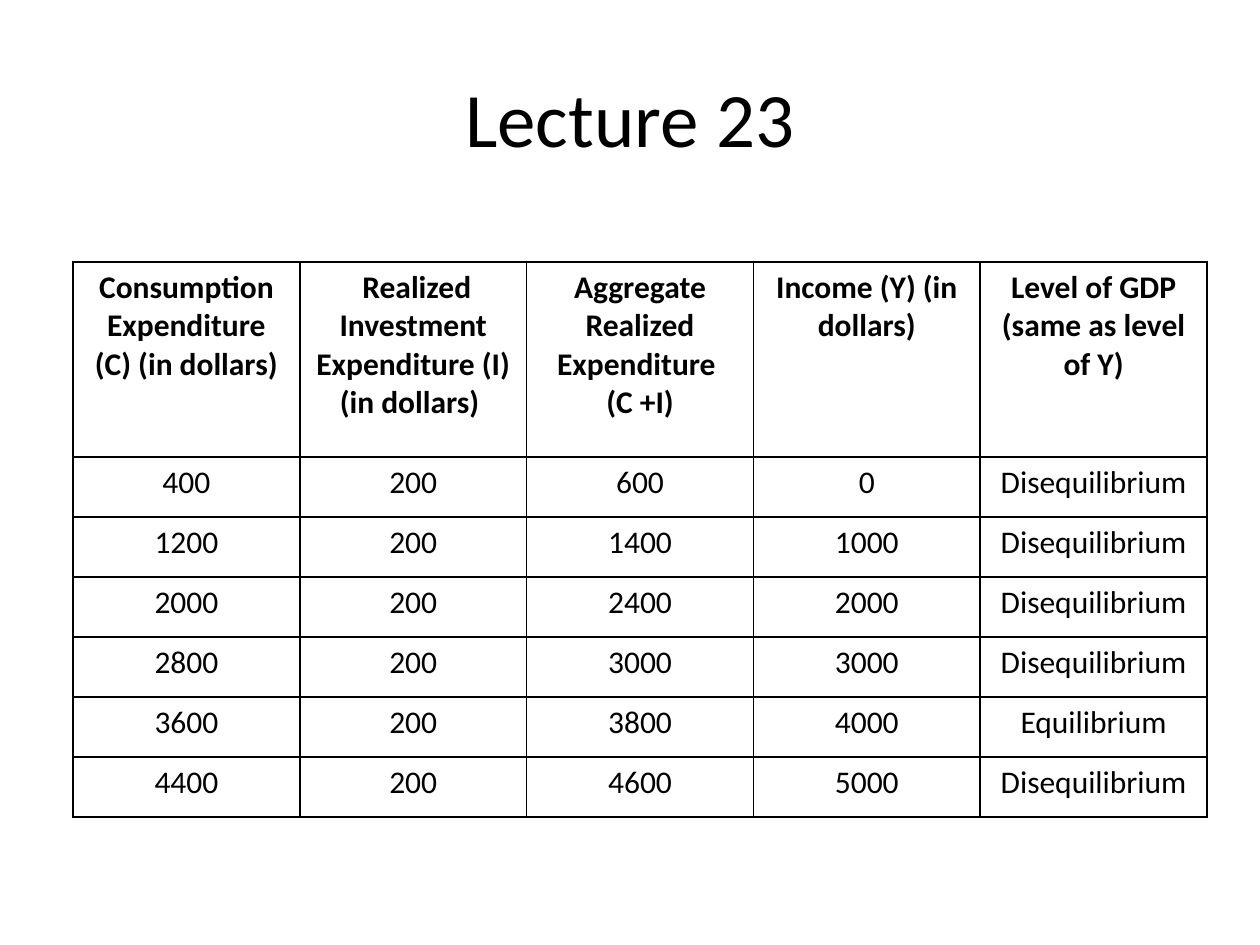
from dataclasses import dataclass

from lxml.etree import SubElement
from pptx import Presentation
from pptx.dml.color import RGBColor
from pptx.enum.text import MSO_ANCHOR, PP_ALIGN
from pptx.oxml.ns import qn
from pptx.util import Emu, Pt


@dataclass(frozen=True)
class Theme:
    """Colours, font and type sizes of the slide."""

    font: str = "Calibri"
    ink: str = "000000"
    title_size: int = 44
    table_size: int = 18
    border_width: int = 1


THEME = Theme()
SLIDE_BOX = (0, 0, 1260, 945)
TITLE_BOX = (63, 38, 1134, 157)
TABLE_BOX = (73, 262, 1134, 555)
HEADER_HEIGHT = 195

HEADERS = [
    ["Consumption Expenditure (C) (in dollars)"],
    [" Realized Investment Expenditure (I) (in dollars) "],
    ["Aggregate Realized Expenditure ", "(C +I)"],
    ["Income (Y) (in dollars)"],
    ["Level of GDP (same as level of Y)"],
]
ROWS = [
    ("400", "200", "600", "0", "Disequilibrium"),
    ("1200", "200", "1400", "1000", "Disequilibrium"),
    ("2000", "200", "2400", "2000", "Disequilibrium"),
    ("2800", "200", "3000", "3000", "Disequilibrium"),
    ("3600", "200", "3800", "4000", "Equilibrium"),
    ("4400", "200", "4600", "5000", "Disequilibrium"),
]


def px(length):
    """Turn px into EMU at 126 px to the inch."""
    return Emu(round(length * 914400 / 126))


def write_lines(text_frame, lines, size, bold=False):
    """Write one centred paragraph for each line."""
    for index, line in enumerate(lines):
        paragraph = text_frame.add_paragraph() if index else text_frame.paragraphs[0]
        paragraph.alignment = PP_ALIGN.CENTER
        run = paragraph.add_run()
        run.text = line
        run.font.name = THEME.font
        run.font.size = Pt(size)
        run.font.bold = bold
        run.font.color.rgb = RGBColor.from_string(THEME.ink)


def draw_borders(cell):
    """Draw a solid line on all four sides of a cell."""
    properties = cell._tc.get_or_add_tcPr()
    for index, side in enumerate(("a:lnL", "a:lnR", "a:lnT", "a:lnB")):
        line = SubElement(properties, qn(side), w=str(Pt(THEME.border_width)))
        properties.insert(index, line)
        fill = SubElement(line, qn("a:solidFill"))
        SubElement(fill, qn("a:srgbClr"), val=THEME.ink)


def place_title(slide, box, text):
    """Fit the title placeholder to its box and fill it."""
    title = slide.shapes.title
    title.left, title.top, title.width, title.height = map(px, box)
    title.text_frame.vertical_anchor = MSO_ANCHOR.MIDDLE
    write_lines(title.text_frame, [text], THEME.title_size)


def place_table(slide, box, headers, rows):
    """Build the income table with equal columns and equal body rows."""
    _, _, width, height = box
    table = slide.shapes.add_table(len(rows) + 1, len(headers), *map(px, box)).table
    table.first_row = False
    table.horz_banding = False
    for column in table.columns:
        column.width = px(width / len(headers))
    body_height = (height - HEADER_HEIGHT) // len(rows)
    contents = [headers] + [[[value] for value in row] for row in rows]
    for row_index, (row, lines_by_cell) in enumerate(zip(table.rows, contents)):
        is_header = row_index == 0
        row.height = px(HEADER_HEIGHT if is_header else body_height)
        for cell, lines in zip(row.cells, lines_by_cell):
            cell.fill.background()
            draw_borders(cell)
            write_lines(cell.text_frame, lines, THEME.table_size, is_header)


def main():
    """Build and save the slide."""
    presentation = Presentation()
    presentation.slide_width, presentation.slide_height = map(px, SLIDE_BOX[2:])
    slide = presentation.slides.add_slide(presentation.slide_layouts[5])
    place_title(slide, TITLE_BOX, "Lecture 23")
    place_table(slide, TABLE_BOX, HEADERS, ROWS)
    presentation.save("out.pptx")


if __name__ == "__main__":
    main()
